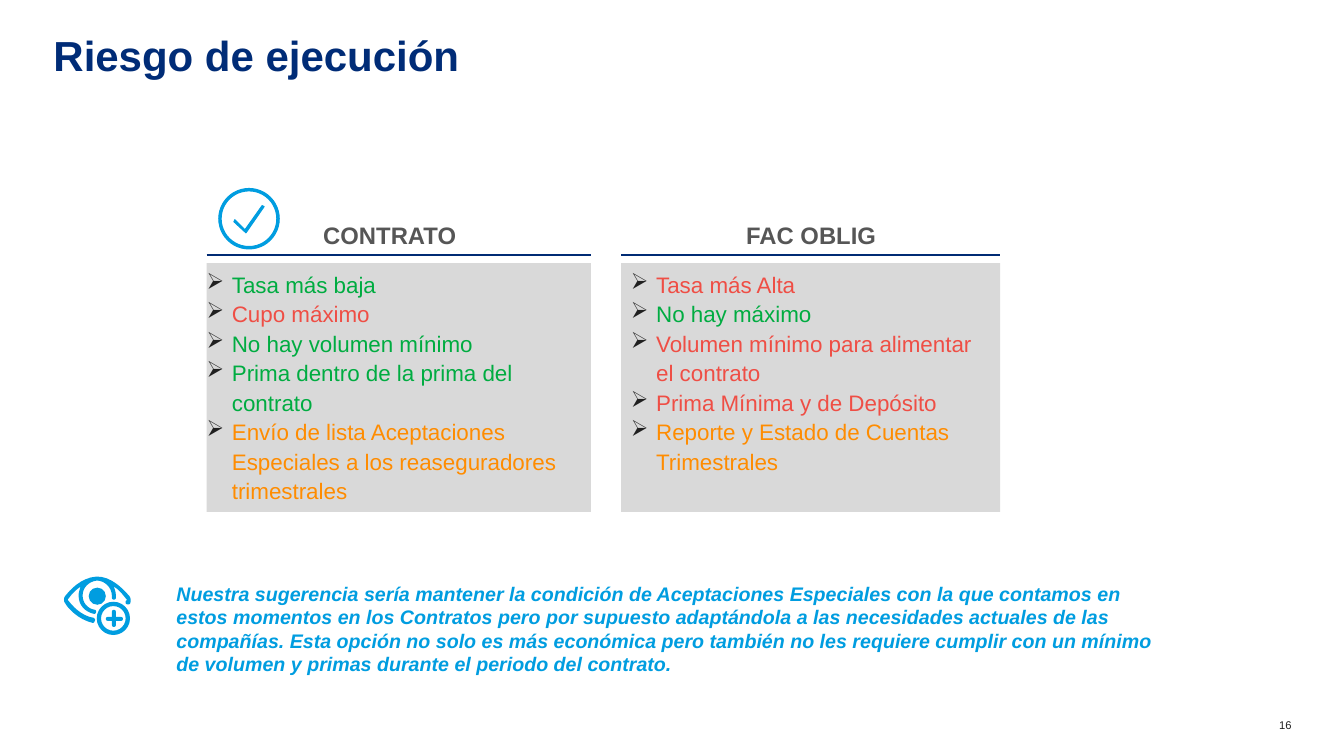
from lxml import etree
from pptx import Presentation
from pptx.dml.color import RGBColor
from pptx.enum.shapes import MSO_CONNECTOR, MSO_SHAPE
from pptx.enum.text import MSO_ANCHOR, PP_ALIGN
from pptx.oxml.ns import qn
from pptx.util import Inches, Pt

COLORS = {
    "navy": "002C77", "rule": "002B74", "sky": "009DE0", "panel": "D9D9D9",
    "heading": "565656", "text": "202020",
    "good": "00AC41", "bad": "EF4E45", "neutral": "FF8C00",
}

presentation = Presentation()
presentation.slide_width = Inches(13.33)
presentation.slide_height = Inches(7.5)
slide = presentation.slides.add_slide(presentation.slide_layouts[5])


def write(frame, text, size, color, bold=False, italic=False, align=PP_ALIGN.LEFT,
          spacing=None, bullet=None, insets=(0, 0), first=True):
    """Write one paragraph into a text frame."""
    frame.word_wrap = True
    frame.vertical_anchor = MSO_ANCHOR.TOP
    frame.margin_left = frame.margin_right = Inches(insets[0])
    frame.margin_top = frame.margin_bottom = Inches(insets[1])
    paragraph = frame.paragraphs[0] if first else frame.add_paragraph()
    paragraph.alignment = align
    if spacing:
        paragraph.line_spacing = spacing
    if bullet:
        properties = paragraph._p.get_or_add_pPr()
        properties.set("marL", str(Inches(0.25)))
        properties.set("indent", str(-Inches(0.25)))
        bullet_color = etree.SubElement(properties, qn("a:buClr"))
        etree.SubElement(bullet_color, qn("a:srgbClr"), val=COLORS["text"])
        etree.SubElement(properties, qn("a:buChar"), char=bullet)
    run = paragraph.add_run()
    run.text = text
    run.font.name = "Arial"
    run.font.size = Pt(size)
    run.font.bold = bold
    run.font.italic = italic
    run.font.color.rgb = RGBColor.from_string(COLORS[color])


def paint(shape, color, outline=False):
    """Give a shape a flat fill, with a thin line of the same colour if wanted."""
    shape.shadow.inherit = False
    shape.fill.solid()
    shape.fill.fore_color.rgb = RGBColor.from_string(COLORS[color])
    if outline:
        shape.line.color.rgb = RGBColor.from_string(COLORS[color])
        shape.line.width = Pt(0.75)
    else:
        shape.line.fill.background()


# Title
title = slide.shapes.title
title.left, title.top, title.width, title.height = map(Inches, (0.53, 0.39, 12.27, 0.54))
write(title.text_frame, "Riesgo de ejecución", 30, "navy", bold=True, spacing=0.8)

# Suggestion and page number
suggestion = (
    "Nuestra sugerencia sería mantener la condición de Aceptaciones Especiales con la que "
    "contamos en estos momentos en los Contratos pero por supuesto adaptándola a las "
    "necesidades actuales de las compañías. Esta opción no solo es más económica pero "
    "también no les requiere cumplir con un mínimo de volumen y primas durante el periodo "
    "del contrato."
)
suggestion_box = slide.shapes.add_textbox(*map(Inches, (1.75, 5.77, 9.73, 0.94)))
write(suggestion_box.text_frame, suggestion, 14, "sky", bold=True, italic=True)
page_box = slide.shapes.add_textbox(*map(Inches, (12.5, 7.13, 0.31, 0.13)))
write(page_box.text_frame, "16", 8, "text", align=PP_ALIGN.RIGHT)

# Comparison columns: heading, heading box, panel left and width, side inset, items
columns = [
    ("CONTRATO", 1.94, 3.85, 2.05, 3.81, 0, [
        ("Tasa más baja", "good"),
        ("Cupo máximo", "bad"),
        ("No hay volumen mínimo", "good"),
        ("Prima dentro de la prima del contrato", "good"),
        ("Envío de lista Aceptaciones Especiales a los reaseguradores trimestrales", "neutral"),
    ]),
    ("FAC OBLIG", 6.64, 2.81, 6.16, 3.76, 0.1, [
        ("Tasa más Alta", "bad"),
        ("No hay máximo", "good"),
        ("Volumen mínimo para alimentar el contrato", "bad"),
        ("Prima Mínima y de Depósito", "bad"),
        ("Reporte y Estado de Cuentas Trimestrales", "neutral"),
    ]),
]
for heading, heading_left, heading_width, left, width, inset, items in columns:
    panel = slide.shapes.add_shape(
        MSO_SHAPE.RECTANGLE, *map(Inches, (left, 2.61, width, 2.47)))
    paint(panel, "panel")
    for index, (item, color) in enumerate(items):
        write(panel.text_frame, item, 16, color, spacing=1.1, bullet="➢",
              insets=(inset, 0.05), first=index == 0)

    heading_box = slide.shapes.add_textbox(
        *map(Inches, (heading_left, 2.14, heading_width, 0.39)))
    write(heading_box.text_frame, heading, 17, "heading", bold=True,
          align=PP_ALIGN.CENTER, insets=(0.1, 0.05))

    rule = slide.shapes.add_connector(
        MSO_CONNECTOR.STRAIGHT, *map(Inches, (left, 2.53, left + width, 2.53)))
    rule.line.color.rgb = RGBColor.from_string(COLORS["rule"])
    rule.line.width = Pt(0.75)
    etree.SubElement(rule._element.spPr, qn("a:effectLst"))

# Eye outline: a start point, then cubic curves (two controls and an end each)
eye_start = (0.94, 6.05)
eye_curves = [
    (0.87, 6.04, 0.82, 5.98, 0.82, 5.91), (0.82, 5.83, 0.88, 5.77, 0.96, 5.76),
    (1.04, 5.76, 1.11, 5.83, 1.11, 5.91), (1.11, 5.92, 1.11, 5.92, 1.11, 5.93),
    (1.11, 5.94, 1.12, 5.95, 1.13, 5.95), (1.14, 5.95, 1.15, 5.94, 1.15, 5.93),
    (1.15, 5.92, 1.15, 5.92, 1.15, 5.91), (1.15, 5.88, 1.14, 5.85, 1.13, 5.82),
    (1.18, 5.85, 1.22, 5.9, 1.25, 5.94), (1.26, 5.94, 1.26, 5.96, 1.25, 5.96),
    (1.24, 5.97, 1.25, 5.99, 1.25, 5.99), (1.26, 6, 1.28, 6, 1.29, 5.99),
    (1.3, 5.97, 1.3, 5.93, 1.28, 5.91), (1.21, 5.83, 1.1, 5.72, 0.96, 5.72),
    (0.8, 5.73, 0.69, 5.86, 0.65, 5.91), (0.63, 5.93, 0.63, 5.97, 0.65, 5.99),
    (0.67, 6.03, 0.78, 6.15, 0.92, 6.18), (0.93, 6.18, 0.94, 6.17, 0.94, 6.16),
    (0.95, 6.15, 0.94, 6.14, 0.93, 6.13), (0.8, 6.11, 0.71, 6, 0.68, 5.96),
    (0.67, 5.96, 0.67, 5.94, 0.68, 5.94), (0.7, 5.91, 0.74, 5.86, 0.8, 5.82),
    (0.79, 5.85, 0.78, 5.88, 0.78, 5.91), (0.78, 6, 0.84, 6.07, 0.93, 6.09),
    (0.94, 6.09, 0.95, 6.09, 0.95, 6.08), (0.96, 6.07, 0.95, 6.05, 0.94, 6.05),
]
steps = 8
eye_points = []
x, y = eye_start
for x1, y1, x2, y2, x3, y3 in eye_curves:
    for step in range(1, steps + 1):
        t = step / steps
        weights = ((1 - t) ** 3, 3 * t * (1 - t) ** 2, 3 * t ** 2 * (1 - t), t ** 3)
        eye_points.append(tuple(
            Inches(sum(weight * value for weight, value in zip(weights, values)))
            for values in ((x, x1, x2, x3), (y, y1, y2, y3))))
    x, y = x3, y3

# Check mark
check_points = [(2.32, 2.2), (2.33, 2.18), (2.43, 2.28), (2.6, 2.04), (2.62, 2.05)]
check_points = [(Inches(x), Inches(y)) for x, y in check_points]

for start, points, outline in [
    (eye_start, eye_points, False), ((2.44, 2.31), check_points, True),
]:
    builder = slide.shapes.build_freeform(*map(Inches, start))
    builder.add_line_segments(points, close=True)
    paint(builder.convert_to_shape(), "sky", outline)

# Round parts of the icons: pupil, plus ring, plus bars, check ring
icon_parts = [
    (MSO_SHAPE.OVAL, (0.88, 5.83, 0.17, 0.17), None, False),
    (MSO_SHAPE.DONUT, (0.96, 5.97, 0.33, 0.33), 0.13, False),
    (MSO_SHAPE.ROUNDED_RECTANGLE, (1.05, 6.12, 0.17, 0.04), 0.5, False),
    (MSO_SHAPE.ROUNDED_RECTANGLE, (1.11, 6.05, 0.04, 0.17), 0.5, False),
    (MSO_SHAPE.DONUT, (2.17, 1.87, 0.6, 0.6), 0.04, True),
]
for preset, box, adjustment, outline in icon_parts:
    part = slide.shapes.add_shape(preset, *map(Inches, box))
    if adjustment:
        part.adjustments[0] = adjustment
    paint(part, "sky", outline)

presentation.save("out.pptx")
